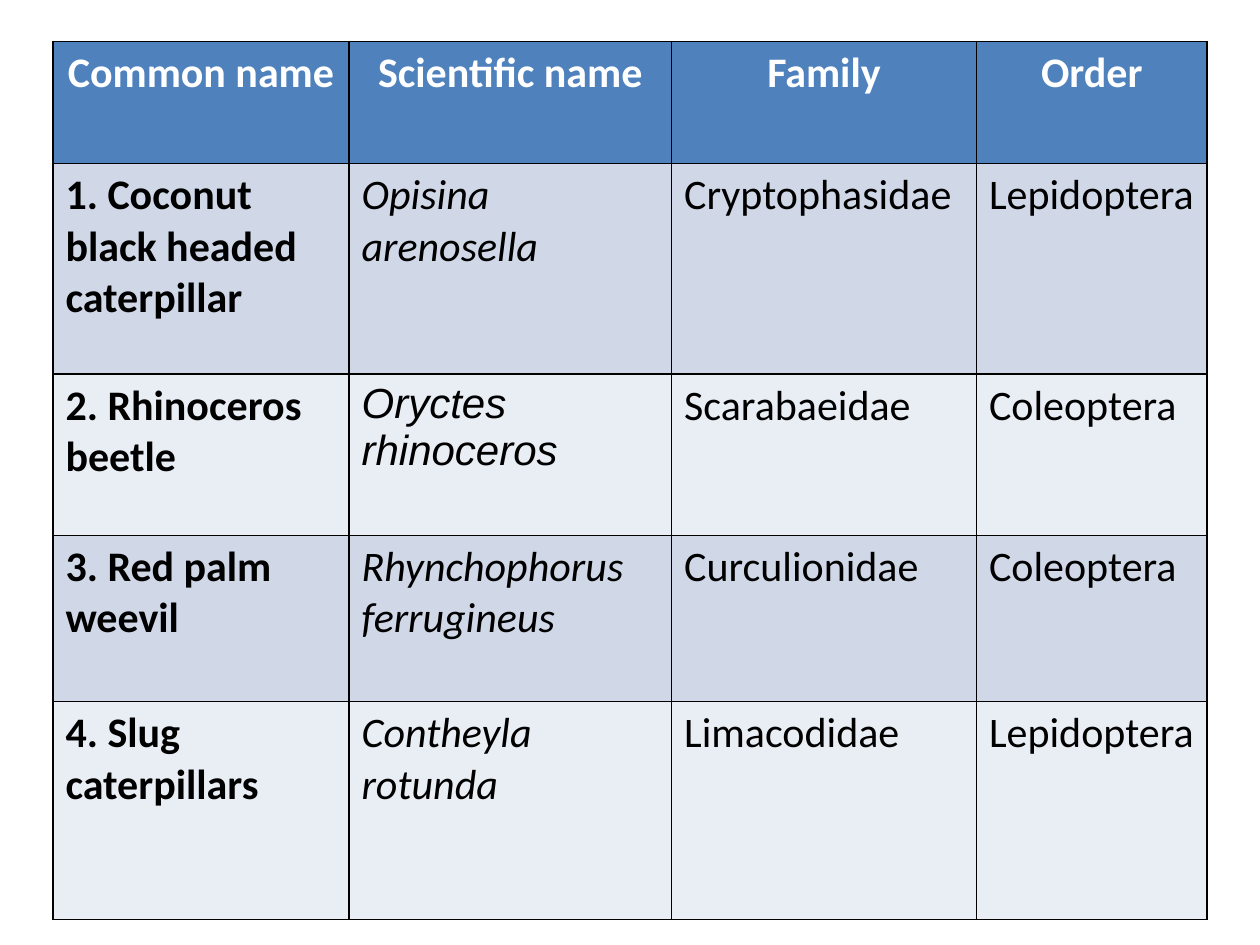
from typing import NamedTuple

from lxml import etree
from pptx import Presentation
from pptx.dml.color import RGBColor
from pptx.enum.text import PP_ALIGN
from pptx.oxml.ns import qn
from pptx.util import Inches, Pt

CENTER, LEFT = PP_ALIGN.CENTER, PP_ALIGN.LEFT

WHITE = RGBColor(0xFF, 0xFF, 0xFF)
BLACK = RGBColor(0x00, 0x00, 0x00)
HEADER_BLUE = RGBColor(0x4F, 0x81, 0xBD)
BAND_DARK = RGBColor(0xD0, 0xD8, 0xE8)
BAND_LIGHT = RGBColor(0xE9, 0xED, 0xF4)

COLUMN_WIDTHS = (2.35, 2.56, 2.42, 1.83)
ROW_HEIGHTS = (0.97, 1.67, 1.28, 1.32, 1.73)
HEADINGS = ("Common name", "Scientific name", "Family", "Order")


class Pest(NamedTuple):
    common_name: str
    scientific_name: str
    family: str
    order: str
    scientific_font: str = "Calibri"


PESTS = (
    Pest("1. Coconut black headed caterpillar", "Opisina arenosella",
         "Cryptophasidae", "Lepidoptera"),
    Pest("2. Rhinoceros beetle", "Oryctes rhinoceros",
         "Scarabaeidae", "Coleoptera", "Arial"),
    Pest("3. Red palm weevil", "Rhynchophorus ferrugineus",
         "Curculionidae", "Coleoptera"),
    Pest("4. Slug caterpillars", "Contheyla rotunda",
         "Limacodidae", "Lepidoptera"),
)


def add_borders(cell) -> None:
    """Draw a thin black line on all four sides; call before filling the cell."""
    properties = cell._tc.get_or_add_tcPr()
    for side in ("a:lnL", "a:lnR", "a:lnT", "a:lnB"):
        line = etree.SubElement(properties, qn(side), w=str(Pt(1)))
        solid = etree.SubElement(line, qn("a:solidFill"))
        etree.SubElement(solid, qn("a:srgbClr"), val=str(BLACK))


def write_cell(cell, text: str, fill: RGBColor, color: RGBColor = BLACK,
               font_name: str = "Calibri", bold: bool = False,
               italic: bool = False, align: PP_ALIGN = LEFT) -> None:
    add_borders(cell)
    cell.fill.solid()
    cell.fill.fore_color.rgb = fill
    cell.text_frame.text = text
    paragraph = cell.text_frame.paragraphs[0]
    paragraph.alignment = align
    font = paragraph.runs[0].font
    font.name, font.size = font_name, Pt(24)
    font.bold, font.italic = bold, italic
    font.color.rgb = color


def main() -> None:
    prs = Presentation()
    prs.slide_width, prs.slide_height = Inches(10), Inches(7.5)
    blank_layout = prs.slide_layouts[6]
    slide = prs.slides.add_slide(blank_layout)

    pest_table = slide.shapes.add_table(
        len(ROW_HEIGHTS), len(COLUMN_WIDTHS), Inches(0.42), Inches(0.33),
        Inches(sum(COLUMN_WIDTHS)), Inches(sum(ROW_HEIGHTS))).table
    for column, width in zip(pest_table.columns, COLUMN_WIDTHS):
        column.width = Inches(width)
    for row, height in zip(pest_table.rows, ROW_HEIGHTS):
        row.height = Inches(height)

    for column, heading in enumerate(HEADINGS):
        write_cell(pest_table.cell(0, column), heading, HEADER_BLUE, WHITE,
                   bold=True, align=CENTER)
    for row, pest in enumerate(PESTS, start=1):
        band = BAND_DARK if row % 2 else BAND_LIGHT
        write_cell(pest_table.cell(row, 0), pest.common_name, band, bold=True)
        write_cell(pest_table.cell(row, 1), pest.scientific_name, band,
                   font_name=pest.scientific_font, italic=True)
        write_cell(pest_table.cell(row, 2), pest.family, band)
        write_cell(pest_table.cell(row, 3), pest.order, band)

    prs.save("out.pptx")


if __name__ == "__main__":
    main()
